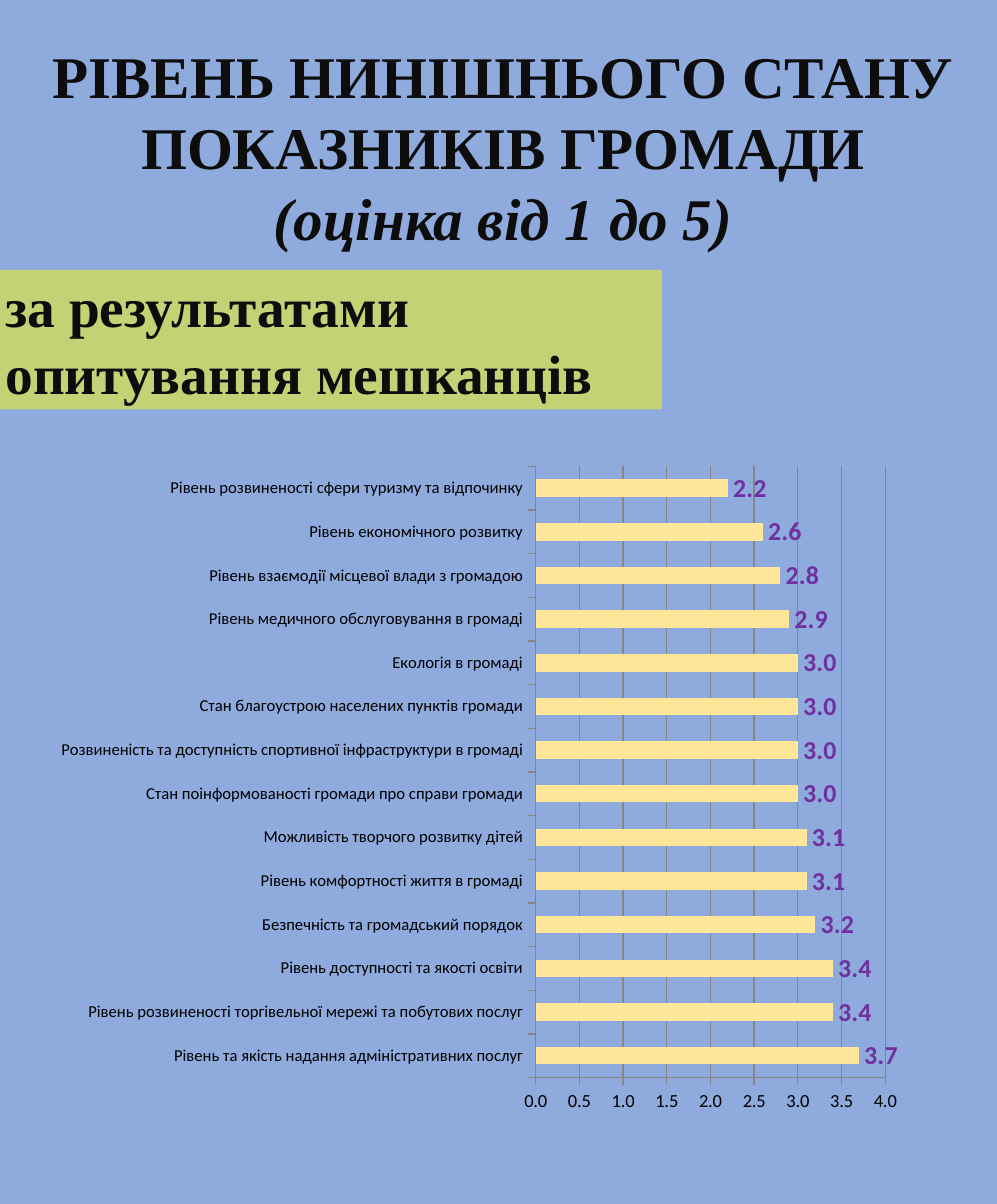
from dataclasses import dataclass

from lxml.etree import SubElement
from pptx import Presentation
from pptx.chart.data import CategoryChartData
from pptx.dml.color import RGBColor
from pptx.enum.chart import XL_CHART_TYPE, XL_LABEL_POSITION, XL_TICK_MARK
from pptx.enum.shapes import MSO_SHAPE
from pptx.enum.text import MSO_ANCHOR, PP_ALIGN
from pptx.oxml import parse_xml
from pptx.oxml.ns import nsdecls, qn
from pptx.util import Inches, Pt


@dataclass(frozen=True)
class Theme:
    background: str = "8FAADC"
    ink: str = "0D0D0D"
    outline: str = "FFFFFF"
    band: str = "FFFF00"
    bar: str = "FFE699"
    value: str = "7030A0"
    axis_text: str = "000000"
    axis_line: str = "868686"
    heading_font: str = "Times New Roman"
    chart_font: str = "Calibri"
    title_size: int = 32
    band_size: int = 30
    value_size: int = 14
    axis_size: int = 10
    category_size: int = 9


@dataclass(frozen=True)
class Box:
    left: float
    top: float
    width: float
    height: float

    def emu(self):
        return [Inches(v) for v in (self.left, self.top, self.width, self.height)]


@dataclass(frozen=True)
class Indicator:
    name: str
    score: float


THEME = Theme()
TITLE_BOX = Box(0.34, 0.28, 6.89, 1.66)
BAND_BOX = Box(0, 2.03, 4.98, 1.05)
CHART_BOX = Box(0.34, 3.42, 6.54, 5.05)
PLOT_BOX = Box(4.03, 3.51, 2.63, 4.6)

INDICATORS = [
    Indicator("Рівень та якість надання адміністративних послуг", 3.7),
    Indicator("Рівень розвиненості торгівельної мережі та побутових послуг", 3.4),
    Indicator("Рівень доступності та якості освіти", 3.4),
    Indicator("Безпечність та громадський порядок", 3.2),
    Indicator("Рівень комфортності життя в громаді", 3.1),
    Indicator("Можливість творчого розвитку дітей", 3.1),
    Indicator("Стан поінформованості громади про справи громади", 3.0),
    Indicator("Розвиненість та доступність спортивної інфраструктури в громаді", 3.0),
    Indicator("Стан благоустрою населених пунктів громади", 3.0),
    Indicator("Екологія в громаді", 3.0),
    Indicator("Рівень медичного обслуговування в громаді", 2.9),
    Indicator("Рівень взаємодії місцевої влади з громадою", 2.8),
    Indicator("Рівень економічного розвитку", 2.6),
    Indicator("Рівень розвиненості сфери туризму та відпочинку", 2.2),
]


def rgb(color: str) -> RGBColor:
    return RGBColor.from_string(color)


def set_font(font, size: int, color: str, name: str, bold: bool = False) -> None:
    font.size, font.name, font.bold = Pt(size), name, bold
    font.color.rgb = rgb(color)


def add_heading(p, text: str, *, size: int, italic: bool = False,
                align: PP_ALIGN = PP_ALIGN.LEFT) -> None:
    """Write one bold heading paragraph with a thin outline."""
    p.alignment = align
    r = p.add_run()
    r.text = text
    set_font(r.font, size, THEME.ink, THEME.heading_font, bold=True)
    r.font.italic = italic
    r.font._element.insert(0, parse_xml(
        f'<a:ln {nsdecls("a")} w="13462"><a:solidFill>'
        f'<a:srgbClr val="{THEME.outline}"/></a:solidFill></a:ln>'))


def prepare_frame(tf, anchor: MSO_ANCHOR) -> None:
    tf.word_wrap = True
    tf.vertical_anchor = anchor
    tf.margin_left = tf.margin_right = Inches(0.04)
    tf.margin_top = tf.margin_bottom = Inches(0.02)


def add_title(slide) -> None:
    tf = slide.shapes.add_textbox(*TITLE_BOX.emu()).text_frame
    prepare_frame(tf, MSO_ANCHOR.TOP)
    add_heading(tf.paragraphs[0], "РІВЕНЬ НИНІШНЬОГО СТАНУ ПОКАЗНИКІВ ГРОМАДИ",
                size=THEME.title_size, align=PP_ALIGN.CENTER)
    add_heading(tf.add_paragraph(), "(оцінка від 1 до 5)",
                size=THEME.title_size, italic=True, align=PP_ALIGN.CENTER)


def add_band(slide) -> None:
    sp = slide.shapes.add_shape(MSO_SHAPE.RECTANGLE, *BAND_BOX.emu())
    sp.shadow.inherit = False
    sp.line.fill.background()
    sp.fill.solid()
    sp.fill.fore_color.rgb = rgb(THEME.band)
    color = sp._element.spPr.find(f'{qn("a:solidFill")}/{qn("a:srgbClr")}')
    SubElement(color, qn("a:alpha"), val="47000")
    tf = sp.text_frame
    prepare_frame(tf, MSO_ANCHOR.TOP)
    add_heading(tf.paragraphs[0], "за результатами", size=THEME.band_size)
    add_heading(tf.add_paragraph(), "опитування мешканців", size=THEME.band_size)


def place_plot(chart) -> None:
    """Fix the inner plot area as fractions of the chart frame."""
    fractions = {
        "x": (PLOT_BOX.left - CHART_BOX.left) / CHART_BOX.width,
        "y": (PLOT_BOX.top - CHART_BOX.top) / CHART_BOX.height,
        "w": PLOT_BOX.width / CHART_BOX.width,
        "h": PLOT_BOX.height / CHART_BOX.height,
    }
    values = "".join(f'<c:{k} val="{v:.4f}"/>' for k, v in fractions.items())
    plot_area = chart._chartSpace.chart.plotArea
    for layout in plot_area.findall(qn("c:layout")):
        plot_area.remove(layout)
    plot_area.insert(0, parse_xml(
        f'<c:layout {nsdecls("c")}><c:manualLayout><c:layoutTarget val="inner"/>'
        f'<c:xMode val="edge"/><c:yMode val="edge"/>{values}'
        '</c:manualLayout></c:layout>'))


def style_axis(axis, size: int) -> None:
    axis.major_tick_mark = XL_TICK_MARK.OUTSIDE
    axis.minor_tick_mark = XL_TICK_MARK.NONE
    axis.format.line.color.rgb = rgb(THEME.axis_line)
    set_font(axis.tick_labels.font, size, THEME.axis_text, THEME.chart_font)


def add_scores(slide) -> None:
    data = CategoryChartData(number_format="0.0")
    data.categories = [i.name for i in INDICATORS]
    data.add_series("Series 1", [i.score for i in INDICATORS])
    chart = slide.shapes.add_chart(
        XL_CHART_TYPE.BAR_CLUSTERED, *CHART_BOX.emu(), data).chart
    chart.has_legend = chart.has_title = False
    set_font(chart.font, THEME.axis_size, THEME.axis_text, THEME.chart_font)
    place_plot(chart)

    # Axes and gridlines
    style_axis(chart.category_axis, THEME.category_size)
    axis = chart.value_axis
    style_axis(axis, THEME.axis_size)
    axis.minimum_scale, axis.maximum_scale, axis.major_unit = 0, 4, 0.5
    axis.tick_labels.number_format = "0.0"
    axis.tick_labels.number_format_is_linked = False
    axis.major_gridlines.format.line.color.rgb = rgb(THEME.axis_line)

    # Bars and their values
    plot = chart.plots[0]
    plot.gap_width, plot.vary_by_categories = 150, False
    fill = plot.series[0].format.fill
    fill.solid()
    fill.fore_color.rgb = rgb(THEME.bar)
    labels = plot.series[0].data_labels
    labels.show_value = True
    labels.number_format, labels.number_format_is_linked = "0.0", False
    labels.position = XL_LABEL_POSITION.OUTSIDE_END
    set_font(labels.font, THEME.value_size, THEME.value, THEME.chart_font, bold=True)


def main() -> None:
    prs = Presentation()
    prs.slide_width, prs.slide_height = Inches(7.5), Inches(9.06)
    slide = prs.slides.add_slide(prs.slide_layouts[6])
    slide.background.fill.solid()
    slide.background.fill.fore_color.rgb = rgb(THEME.background)
    add_title(slide)
    add_scores(slide)
    add_band(slide)
    prs.save("out.pptx")


if __name__ == "__main__":
    main()
